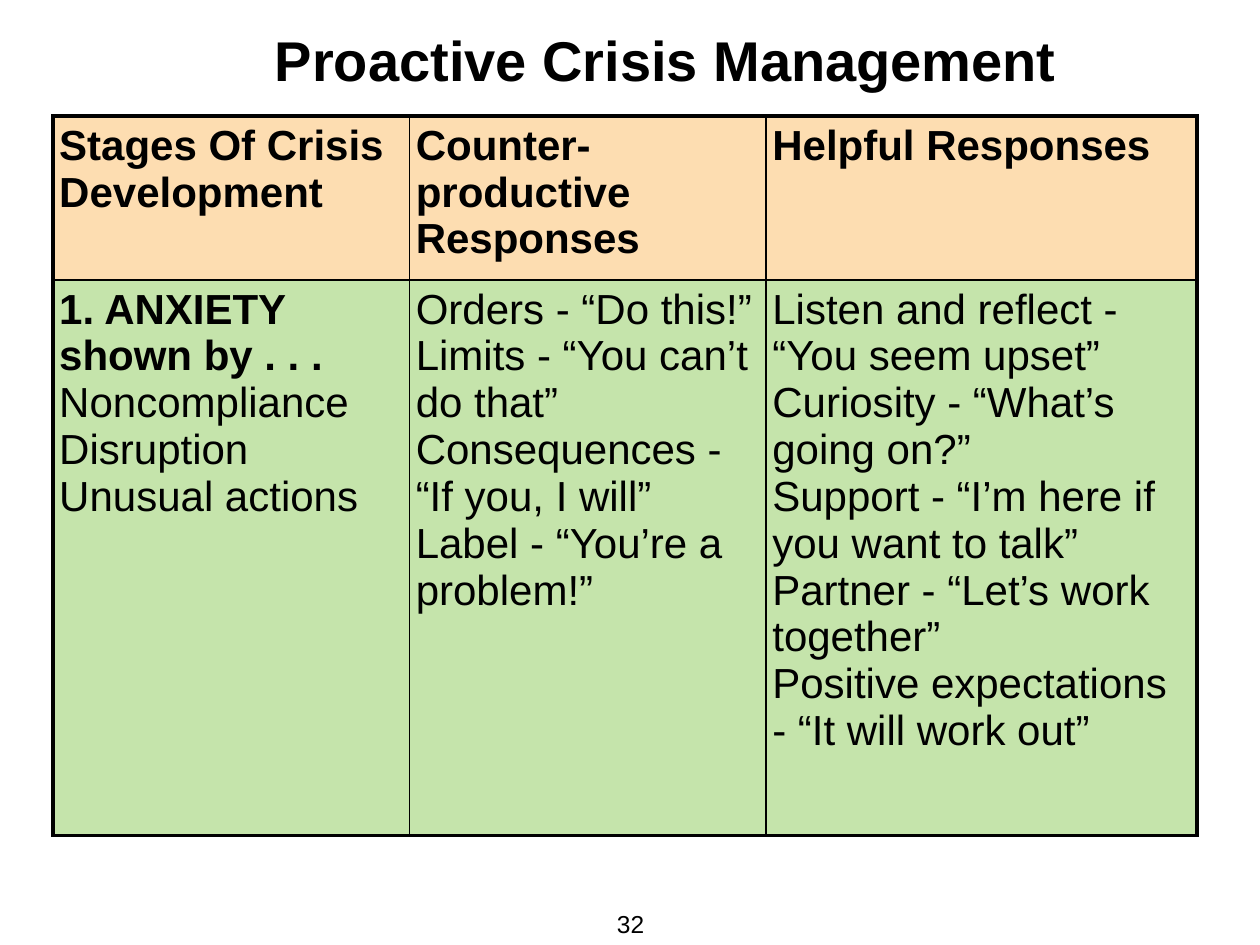
from dataclasses import dataclass

from lxml import etree
from pptx import Presentation
from pptx.dml.color import RGBColor
from pptx.enum import text
from pptx.oxml import ns
from pptx.util import Inches, Pt


@dataclass(frozen=True)
class Theme:
    """Colours, type sizes and line widths of the slide."""
    font: str = "Arial"
    ink: str = "000000"
    heading_fill: str = "FDDDB1"
    stage_fill: str = "C5E4AB"
    title_size: int = 32
    table_size: int = 24
    number_size: int = 14
    outer_line: float = 2.25
    inner_line: float = 1
    inset: float = 0.05


@dataclass(frozen=True)
class Entry:
    """One table cell: its lines, and how many of them lead in bold."""
    lines: tuple[str, ...]
    bold_lines: int = 0


@dataclass(frozen=True)
class Band:
    """One table row with its height and fill."""
    height: float
    fill: str
    entries: tuple[Entry, ...]


THEME = Theme()
COLUMN_WIDTHS = (2.83, 2.83, 3.42)
BANDS = (
    Band(1.3, THEME.heading_fill, (
        Entry(("Stages Of Crisis Development",), 1),
        Entry(("Counter-productive Responses",), 1),
        Entry(("Helpful Responses",), 1),
    )),
    Band(4.41, THEME.stage_fill, (
        Entry(("1. ANXIETY shown by . . .", "Noncompliance", "Disruption", "Unusual actions"), 1),
        Entry(("Orders - “Do this!”", "Limits - “You can’t do that”",
               "Consequences - “If you, I will”", "Label - “You’re a problem!”")),
        Entry(("Listen and reflect - “You seem upset”", "Curiosity - “What’s going on?”",
               "Support - “I’m here if you want to talk”", "Partner - “Let’s work together”",
               "Positive expectations - “It will work out”")),
    )),
)


def style_paragraph(paragraph, size: int, bold: bool = False) -> None:
    """Apply the theme's font to a whole paragraph."""
    font = paragraph.font
    font.name, font.size, font.bold = THEME.font, Pt(size), bold
    font.color.rgb = RGBColor.from_string(THEME.ink)


def set_insets(holder) -> None:
    """Give a cell or text frame the same narrow margin on every side."""
    holder.margin_left = holder.margin_right = Inches(THEME.inset)
    holder.margin_top = holder.margin_bottom = Inches(THEME.inset)


def add_border(cell, side: str, width: float) -> None:
    """Draw one side of a cell."""
    line = etree.SubElement(cell._tc.get_or_add_tcPr(), ns.qn(f"a:ln{side}"), w=str(Pt(width)))
    fill = etree.SubElement(line, ns.qn("a:solidFill"))
    etree.SubElement(fill, ns.qn("a:srgbClr"), val=THEME.ink)


def fill_cell(cell, entry: Entry, fill: str, outer_sides: dict[str, bool]) -> None:
    """Write, frame and colour one cell."""
    set_insets(cell)
    cell.text_frame.text = "\n".join(entry.lines)
    for index, paragraph in enumerate(cell.text_frame.paragraphs):
        style_paragraph(paragraph, THEME.table_size, index < entry.bold_lines)
    for side, outer in outer_sides.items():
        add_border(cell, side, THEME.outer_line if outer else THEME.inner_line)
    cell.fill.solid()
    cell.fill.fore_color.rgb = RGBColor.from_string(fill)


def add_title(slide, wording: str) -> None:
    """Place the title with its first-line indent."""
    title = slide.shapes.title
    title.left, title.top, title.width, title.height = map(Inches, (1.13, 0, 7.31, 1.25))
    frame = title.text_frame
    frame.text = wording
    frame.auto_size = text.MSO_AUTO_SIZE.NONE
    frame.vertical_anchor = text.MSO_ANCHOR.TOP
    set_insets(frame)
    paragraph = frame.paragraphs[0]
    paragraph.alignment = text.PP_ALIGN.CENTER
    paragraph.line_spacing = 1.28
    properties = paragraph._p.get_or_add_pPr()
    properties.set("marL", "0")
    properties.set("indent", str(Inches(1)))
    style_paragraph(paragraph, THEME.title_size, True)


def add_stage_table(slide) -> None:
    """Add the table of crisis stages and responses."""
    table = slide.shapes.add_table(
        len(BANDS), len(COLUMN_WIDTHS), Inches(0.42), Inches(0.92),
        Inches(sum(COLUMN_WIDTHS)), Inches(sum(band.height for band in BANDS))).table
    table.first_row = table.horz_banding = False
    for column, width in zip(table.columns, COLUMN_WIDTHS):
        column.width = Inches(width)
    for r, band in enumerate(BANDS):
        table.rows[r].height = Inches(band.height)
        for c, entry in enumerate(band.entries):
            outer_sides = {"L": c == 0, "R": c == len(COLUMN_WIDTHS) - 1,
                           "T": r == 0, "B": r == len(BANDS) - 1}
            fill_cell(table.cell(r, c), entry, band.fill, outer_sides)


def add_page_number(slide, number: str) -> None:
    """Add the page number at the foot of the slide."""
    frame = slide.shapes.add_textbox(*map(Inches, (4.84, 7.16, 0.33, 0.34))).text_frame
    frame.text = number
    frame.word_wrap = False
    frame.vertical_anchor = text.MSO_ANCHOR.BOTTOM
    set_insets(frame)
    frame.paragraphs[0].alignment = text.PP_ALIGN.CENTER
    style_paragraph(frame.paragraphs[0], THEME.number_size)


def main() -> None:
    """Build and save the slide."""
    deck = Presentation()
    deck.slide_width, deck.slide_height = Inches(10), Inches(7.5)
    slide = deck.slides.add_slide(deck.slide_layouts[5])
    add_page_number(slide, "32")
    add_title(slide, "Proactive Crisis Management")
    add_stage_table(slide)
    deck.save("out.pptx")


if __name__ == "__main__":
    main()
